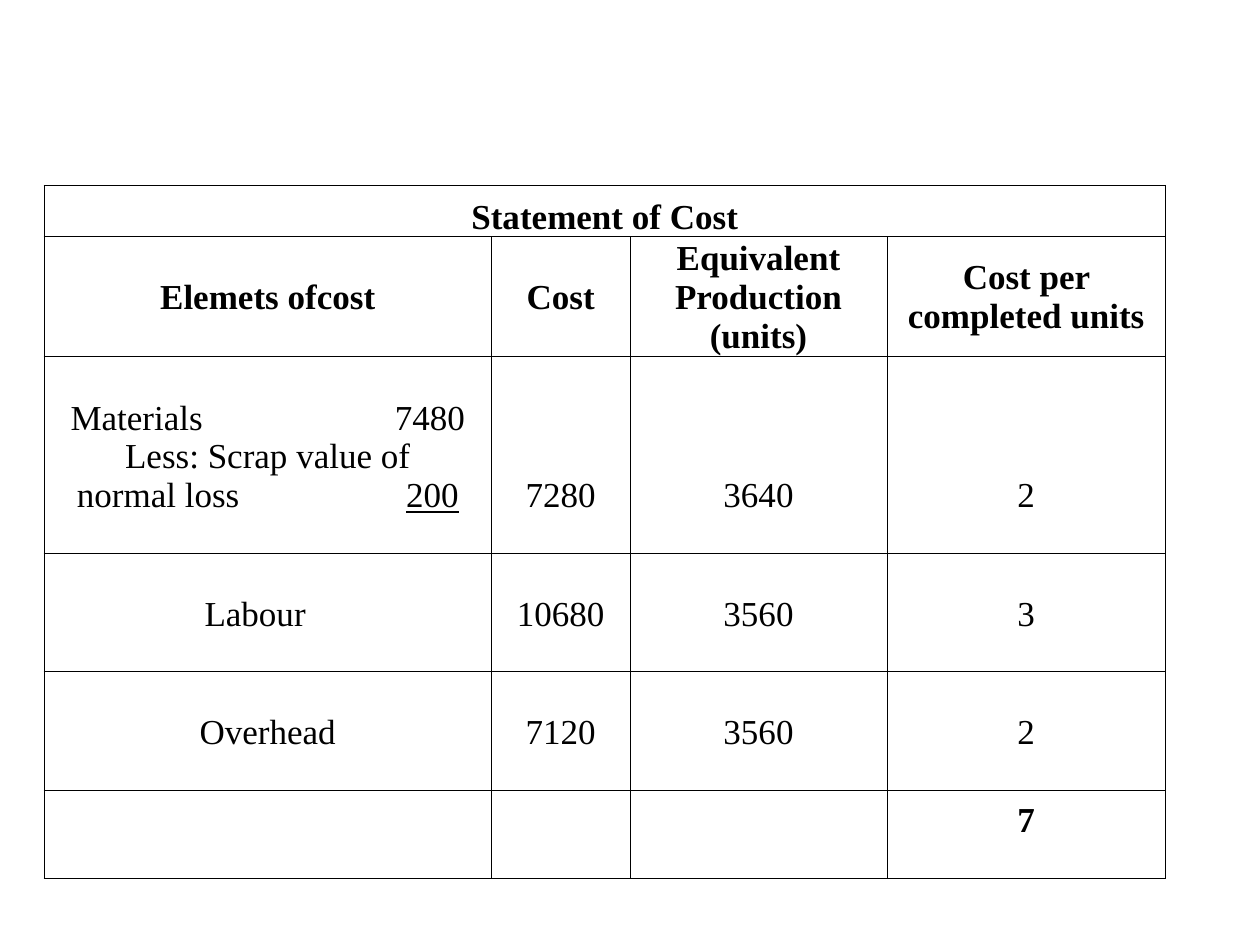
from dataclasses import dataclass

from lxml import etree
from pptx import Presentation
from pptx import util as u
from pptx.dml.color import RGBColor
from pptx.enum import text
from pptx.oxml import ns

FONT = "Times New Roman"
BLACK = "000000"
COLUMN_WIDTHS = [3.55, 1.1, 2.04, 2.21]
INSET = 0.01
LINE_GAP = 0.3  # space left under the figures
BOTTOM, MIDDLE = text.MSO_ANCHOR.BOTTOM, text.MSO_ANCHOR.MIDDLE


@dataclass
class Row:
    height: float
    cells: list[str]
    bold: bool = False
    anchor: text.MSO_ANCHOR = BOTTOM
    bottom: float = LINE_GAP


ROWS = [
    Row(0.41, ["Statement of Cost", "", "", ""], True, BOTTOM, 0),
    Row(0.95, ["Elemets ofcost", "Cost", "Equivalent Production (units)",
               "Cost per completed units"], True, MIDDLE, 0),
    Row(1.56, ["", "7280", "3640", "2"]),
    Row(0.94, ["Labour", "10680", "3560", "3"]),
    Row(0.94, ["Overhead", "7120", "3560", "2"]),
    Row(0.7, ["", "", "", "7"], True),
]


def color(value: str) -> RGBColor:
    return RGBColor.from_string(value)


def add_text(paragraph, content: str, *, bold: bool = False, underline: bool = False,
             size: float = 20, fill: str = BLACK) -> None:
    run = paragraph.add_run()
    run.text = content
    font = run.font
    font.name, font.size = FONT, u.Pt(size)
    font.bold, font.underline = bold, underline
    font.color.rgb = color(fill)


def set_borders(cell, value: str = BLACK, width: float = 0.5) -> None:
    properties = cell._tc.get_or_add_tcPr()
    for index, side in enumerate(("lnL", "lnR", "lnT", "lnB")):
        line = etree.Element(ns.qn(f"a:{side}"), w=str(u.Pt(width)))
        fill = etree.SubElement(line, ns.qn("a:solidFill"))
        etree.SubElement(fill, ns.qn("a:srgbClr"), val=value)
        properties.insert(index, line)


def set_tabs(paragraph, left: float, right: float) -> None:
    """Start the label at the left stop and end the amount at the right stop."""
    tabs = etree.SubElement(paragraph._p.get_or_add_pPr(), ns.qn("a:tabLst"))
    for position, alignment in ((left, "l"), (right, "r")):
        etree.SubElement(tabs, ns.qn("a:tab"), pos=str(u.Inches(position)), algn=alignment)


def fill_cell(cell, content: str, row: Row) -> None:
    cell.fill.background()
    set_borders(cell)
    cell.margin_left = cell.margin_right = cell.margin_top = u.Inches(INSET)
    cell.margin_bottom = u.Inches(row.bottom)
    cell.vertical_anchor = row.anchor
    if content:
        paragraph = cell.text_frame.paragraphs[0]
        paragraph.alignment = text.PP_ALIGN.CENTER
        add_text(paragraph, content, bold=row.bold)


def fill_materials(cell) -> None:
    frame = cell.text_frame
    materials, scrap, loss = frame.paragraphs[0], frame.add_paragraph(), frame.add_paragraph()
    materials.alignment = loss.alignment = text.PP_ALIGN.LEFT
    scrap.alignment = text.PP_ALIGN.CENTER
    set_tabs(materials, 0.2, 3.33)
    set_tabs(loss, 0.25, 3.28)
    add_text(materials, "\tMaterials\t7480")
    add_text(scrap, "Less: Scrap value of")
    add_text(loss, "\tnormal loss\t")
    add_text(loss, "200", underline=True)


def main() -> None:
    presentation = Presentation()
    presentation.slide_width, presentation.slide_height = u.Inches(10), u.Inches(7.5)
    slide = presentation.slides.add_slide(presentation.slide_layouts[6])

    # Cost table
    shape = slide.shapes.add_table(
        len(ROWS), len(COLUMN_WIDTHS), u.Inches(0.35), u.Inches(1.47),
        u.Inches(sum(COLUMN_WIDTHS)), u.Inches(sum(row.height for row in ROWS)))
    table = shape.table
    table.first_row = table.horz_banding = False
    for column, width in zip(table.columns, COLUMN_WIDTHS):
        column.width = u.Inches(width)
    for index, row in enumerate(ROWS):
        table.rows[index].height = u.Inches(row.height)
        for position, content in enumerate(row.cells):
            fill_cell(table.cell(index, position), content, row)

    # Heading across all columns, and the two special labels
    table.cell(0, 0).merge(table.cell(0, len(COLUMN_WIDTHS) - 1))
    fill_materials(table.cell(2, 0))
    table.cell(3, 0).margin_right = u.Inches(0.21)

    presentation.save("out.pptx")


if __name__ == "__main__":
    main()
